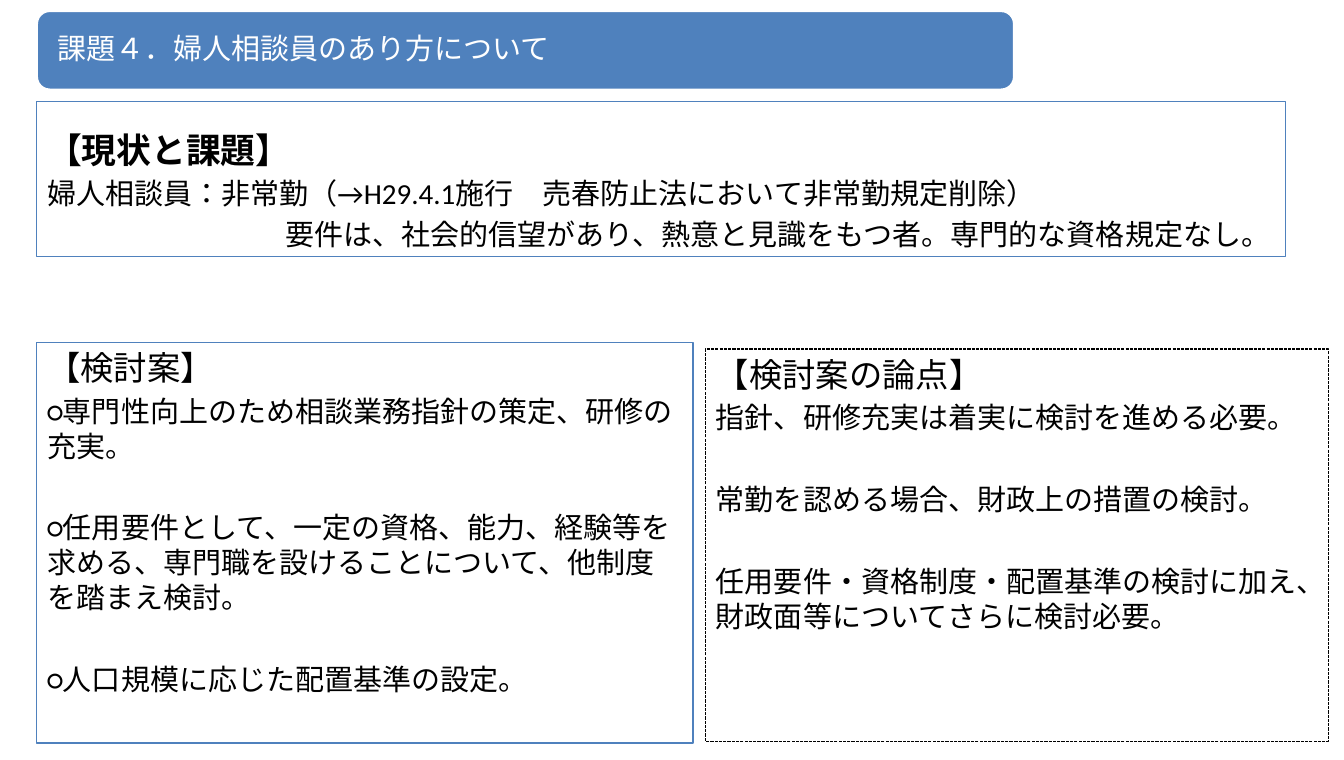
from pptx import Presentation
from pptx.dml.color import RGBColor
from pptx.enum.dml import MSO_LINE
from pptx.enum.lang import MSO_LANGUAGE_ID as LANGUAGE
from pptx.enum.shapes import MSO_SHAPE
from pptx.enum.text import MSO_ANCHOR, MSO_AUTO_SIZE, PP_ALIGN
from pptx.util import Cm, Pt
from lxml import etree

BLUE = RGBColor(0x4F, 0x81, 0xBD)
WHITE = RGBColor(0xFF, 0xFF, 0xFF)
BLACK = RGBColor(0x00, 0x00, 0x00)
DRAWING = "{http://schemas.openxmlformats.org/drawingml/2006/main}"
FONT = "Calibri"
NEAR, FAR = 4, 32.3


def write(paragraph, text, size=20, color=BLACK, bold=False, before=0, indent=0):
    paragraph.alignment = PP_ALIGN.LEFT
    paragraph.space_before = Pt(before)
    run = paragraph.add_run()
    run.text = text
    run.font.name = FONT
    run.font.size = Pt(size)
    run.font.bold = bold
    run.font.color.rgb = color
    run.font.language_id = LANGUAGE.JAPANESE
    etree.SubElement(run.font._element, DRAWING + "ea", typeface=FONT)
    properties = paragraph._p.get_or_add_pPr()
    properties.set("marL", str(Cm(indent)))
    properties.set("indent", "0")
    etree.SubElement(properties, DRAWING + "buNone")


def place(shape, left, top, width, height):
    shape.left, shape.top = Cm(left), Cm(top)
    shape.width, shape.height = Cm(width), Cm(height)


presentation = Presentation()
presentation.slide_width = Cm(32.71)
presentation.slide_height = Cm(18.49)
slide = presentation.slides.add_slide(presentation.slide_layouts[4])

banner = slide.shapes.add_shape(
    MSO_SHAPE.ROUNDED_RECTANGLE, Cm(0.89), Cm(0.26), Cm(23.8), Cm(1.93))
banner.shadow.inherit = False
banner.fill.solid()
banner.fill.fore_color.rgb = BLUE
banner.line.color.rgb = WHITE
banner.line.width = Pt(2)
slide.shapes._spTree.insert(2, banner._element)

title = slide.shapes.title
place(title, 0.6, 0.29, 23.7, 1.85)
title_frame = title.text_frame
title_frame.auto_size = MSO_AUTO_SIZE.NONE
title_frame.vertical_anchor = MSO_ANCHOR.MIDDLE
title_frame.margin_left = title_frame.margin_right = Cm(0.79)
title_frame.margin_top = title_frame.margin_bottom = Cm(0)
title_frame.paragraphs[0].line_spacing = 0.9
write(title_frame.paragraphs[0], "課題４．婦人相談員のあり方について", color=WHITE)

panels = [
    (1, (0.89, 2.47, 30.4, 3.77), BLUE, 0.75, None, MSO_ANCHOR.BOTTOM, [
        ("【現状と課題】", dict(size=24, bold=True)),
        ("婦人相談員：非常勤（→H29.4.1施行　売春防止法において非常勤規定削除）",
         dict(before=NEAR)),
        ("要件は、社会的信望があり、熱意と見識をもつ者。専門的な資格規定なし。",
         dict(before=NEAR, indent=5.8)),
    ]),
    (2, (0.89, 8.33, 15.98, 9.75), BLUE, 1, None, MSO_ANCHOR.TOP, [
        ("【検討案】", dict(size=23)),
        ("○専門性向上のため相談業務指針の策定、研修の充実。", dict(before=NEAR)),
        ("○任用要件として、一定の資格、能力、経験等を求める、専門職を設けることについて、"
         "他制度を踏まえ検討。", dict(before=FAR)),
        ("○人口規模に応じた配置基準の設定。", dict(before=FAR)),
    ]),
    (4, (17.17, 8.49, 15.16, 9.55), BLACK, 0.75, MSO_LINE.SQUARE_DOT, MSO_ANCHOR.TOP, [
        ("【検討案の論点】", dict(size=23)),
        ("指針、研修充実は着実に検討を進める必要。", dict(before=NEAR)),
        ("常勤を認める場合、財政上の措置の検討。", dict(before=FAR)),
        ("任用要件・資格制度・配置基準の検討に加え、財政面等についてさらに検討必要。",
         dict(before=FAR)),
    ]),
]

placeholders = {shape.placeholder_format.idx: shape for shape in slide.placeholders}
for index, box, line_color, line_width, dash, anchor, lines in panels:
    panel = placeholders.pop(index)
    place(panel, *box)
    panel.line.color.rgb = line_color
    panel.line.width = Pt(line_width)
    if dash:
        panel.line.dash_style = dash
    frame = panel.text_frame
    frame.auto_size = MSO_AUTO_SIZE.NONE
    frame.vertical_anchor = anchor
    for number, (text, style) in enumerate(lines):
        paragraph = frame.add_paragraph() if number else frame.paragraphs[0]
        write(paragraph, text, **style)

unused = placeholders[3]._element
unused.getparent().remove(unused)

presentation.save("out.pptx")
